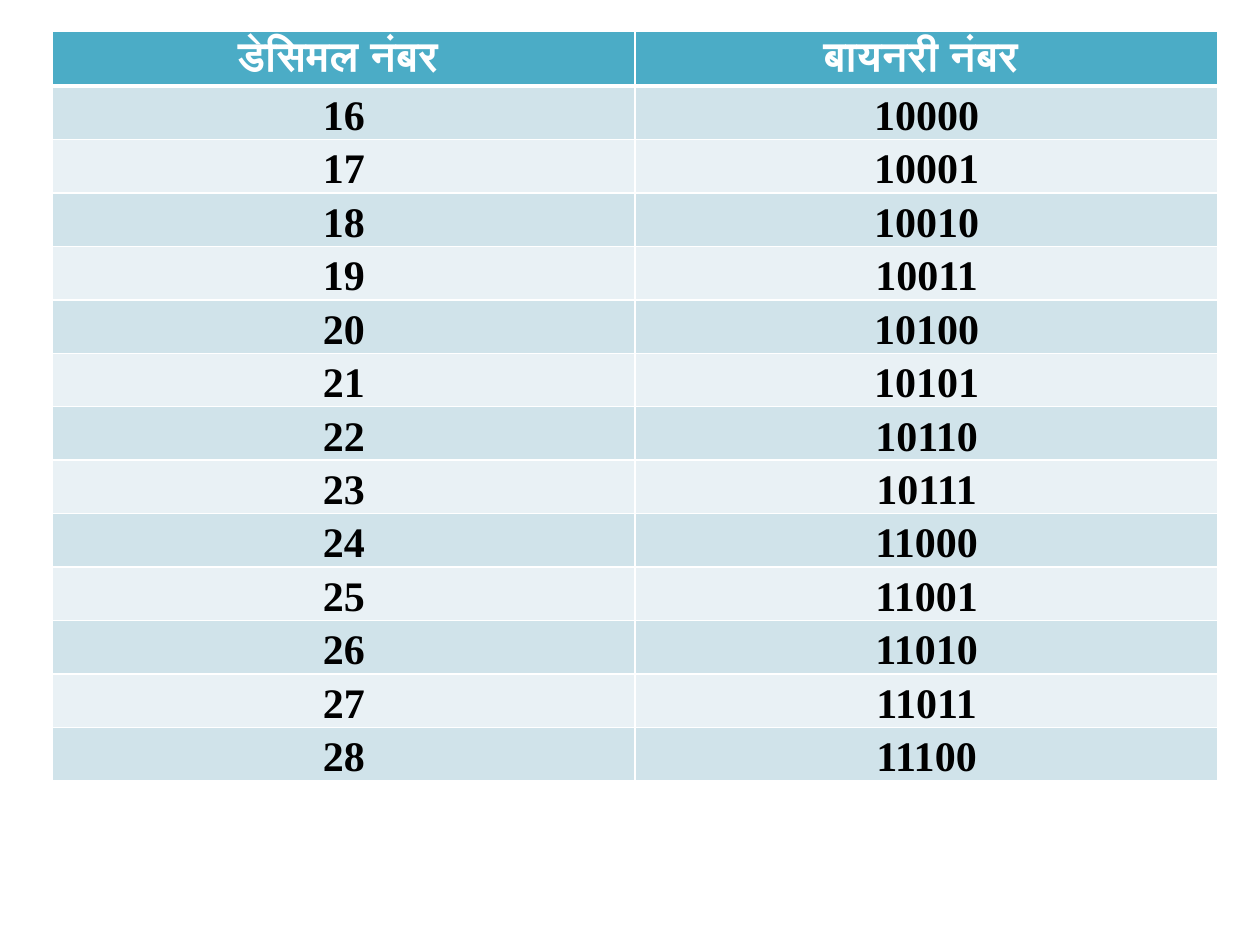
from lxml import etree
from pptx import Presentation
from pptx.dml.color import RGBColor
from pptx.enum.text import PP_ALIGN
from pptx.oxml.ns import qn
from pptx.util import Inches, Pt

CENTER = PP_ALIGN.CENTER
WHITE = RGBColor(0xFF, 0xFF, 0xFF)
BLACK = RGBColor(0, 0, 0)
TEAL = RGBColor(0x4B, 0xAC, 0xC6)
BANDS = (RGBColor(0xD0, 0xE3, 0xEA), RGBColor(0xE9, 0xF1, 0xF5))

HEADINGS = ("डेसिमल नंबर ", "बायनरी नंबर ")
NUMBERS = range(16, 29)


class NumberSlide:
    heading_font = "Calibri"
    number_font = "Times New Roman"
    size = Pt(24)
    heading_margin = Inches(0.05)
    heading_height = Inches(0.43)
    row_height = Inches(0.42)
    thin, thick = Pt(1), Pt(3)

    def __init__(self, prs):
        self.width, self.height = prs.slide_width, prs.slide_height
        self.slide = prs.slides.add_slide(prs.slide_layouts[6])

    def borders(self, cell, top, bottom):
        tc_pr = cell._tc.get_or_add_tcPr()
        widths = {"a:lnL": self.thin, "a:lnR": self.thin, "a:lnT": top, "a:lnB": bottom}
        for tag, width in widths.items():
            line = etree.SubElement(tc_pr, qn(tag), w=str(int(width)))
            fill = etree.SubElement(line, qn("a:solidFill"))
            etree.SubElement(fill, qn("a:srgbClr"), val=str(WHITE))

    def cell(self, cell, text, fill, font, color, margin=0, spacing=None):
        cell.margin_left = cell.margin_right = Inches(0.07)
        cell.margin_top = cell.margin_bottom = margin
        cell.fill.solid()
        cell.fill.fore_color.rgb = fill
        cell.text = text
        p = cell.text_frame.paragraphs[0]
        p.alignment = CENTER
        p.line_spacing = spacing
        p.font.name = font
        p.font.size = self.size
        p.font.bold = True
        p.font.color.rgb = color

    def table(self, headings, rows, left, top, width):
        """Place a banded table; left, top and width are shares of the slide."""
        frame = self.slide.shapes.add_table(
            len(rows) + 1, len(headings),
            int(self.width * left), int(self.height * top),
            int(self.width * width), self.heading_height + self.row_height * len(rows))
        table = frame.table
        for row in table.rows:
            row.height = self.row_height
        table.rows[0].height = self.heading_height
        for c, heading in enumerate(headings):
            cell = table.cell(0, c)
            self.borders(cell, self.thin, self.thick)
            self.cell(cell, heading, TEAL, self.heading_font, WHITE,
                      margin=self.heading_margin)
        for r, values in enumerate(rows, 1):
            for c, value in enumerate(values):
                cell = table.cell(r, c)
                self.borders(cell, self.thick if r == 1 else self.thin, self.thin)
                self.cell(cell, value, BANDS[(r - 1) % 2], self.number_font, BLACK,
                          spacing=1.15)


def main():
    prs = Presentation()
    prs.slide_width, prs.slide_height = Inches(10), Inches(7.5)
    s = NumberSlide(prs)
    rows = [(str(n), f"{n:b}") for n in NUMBERS]
    s.table(HEADINGS, rows, left=1 / 24, top=1 / 30, width=0.925)
    prs.save("out.pptx")


if __name__ == "__main__":
    main()
